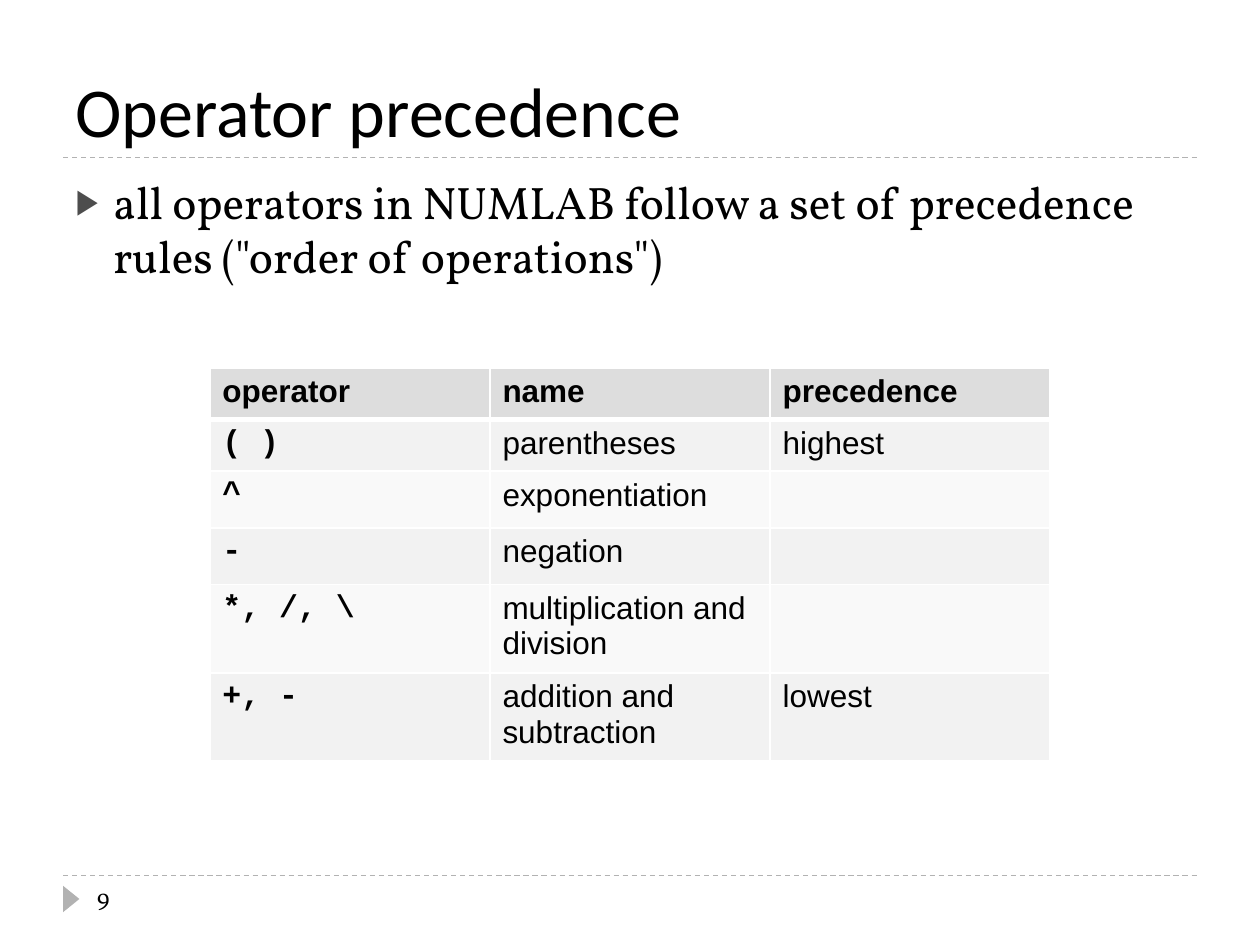
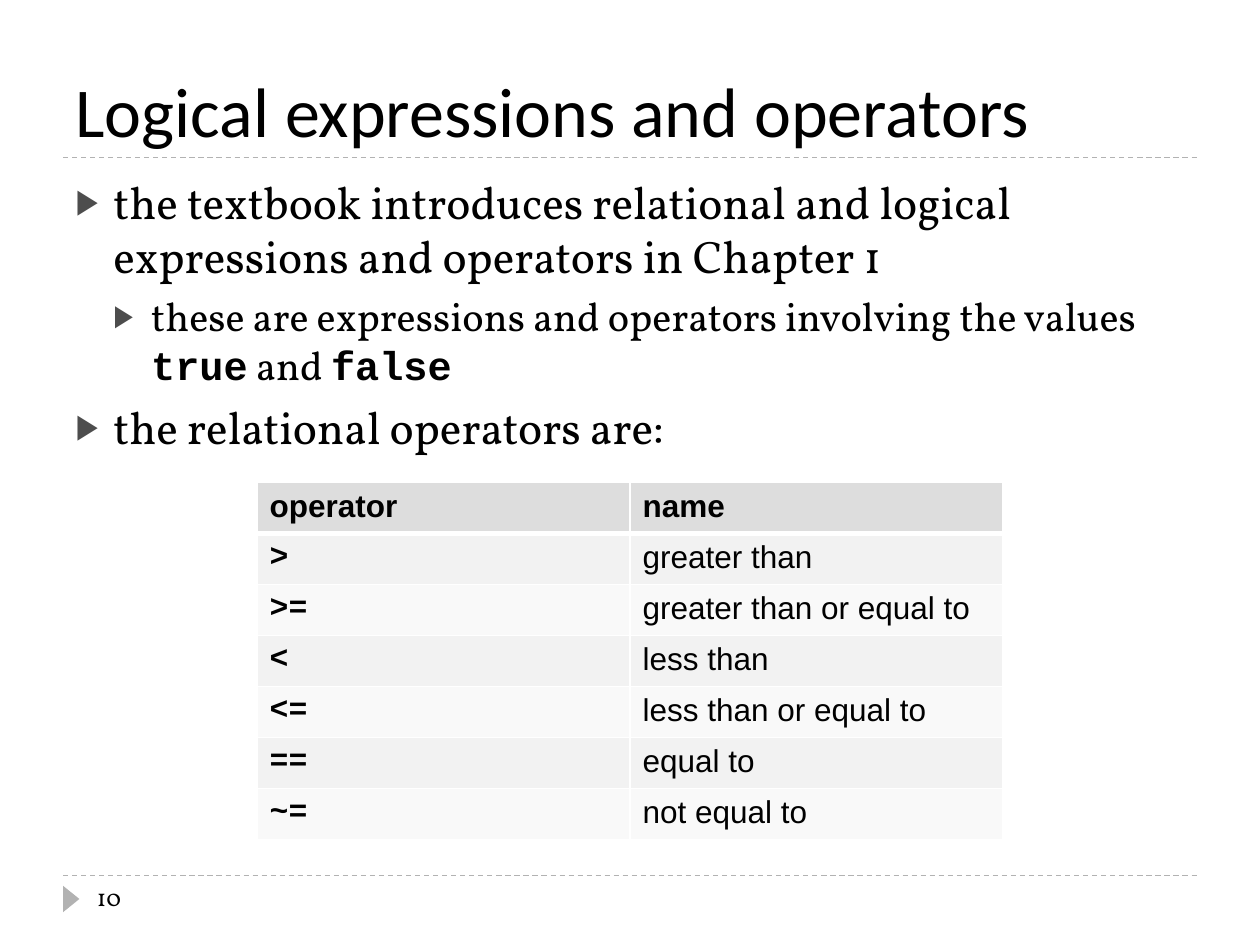
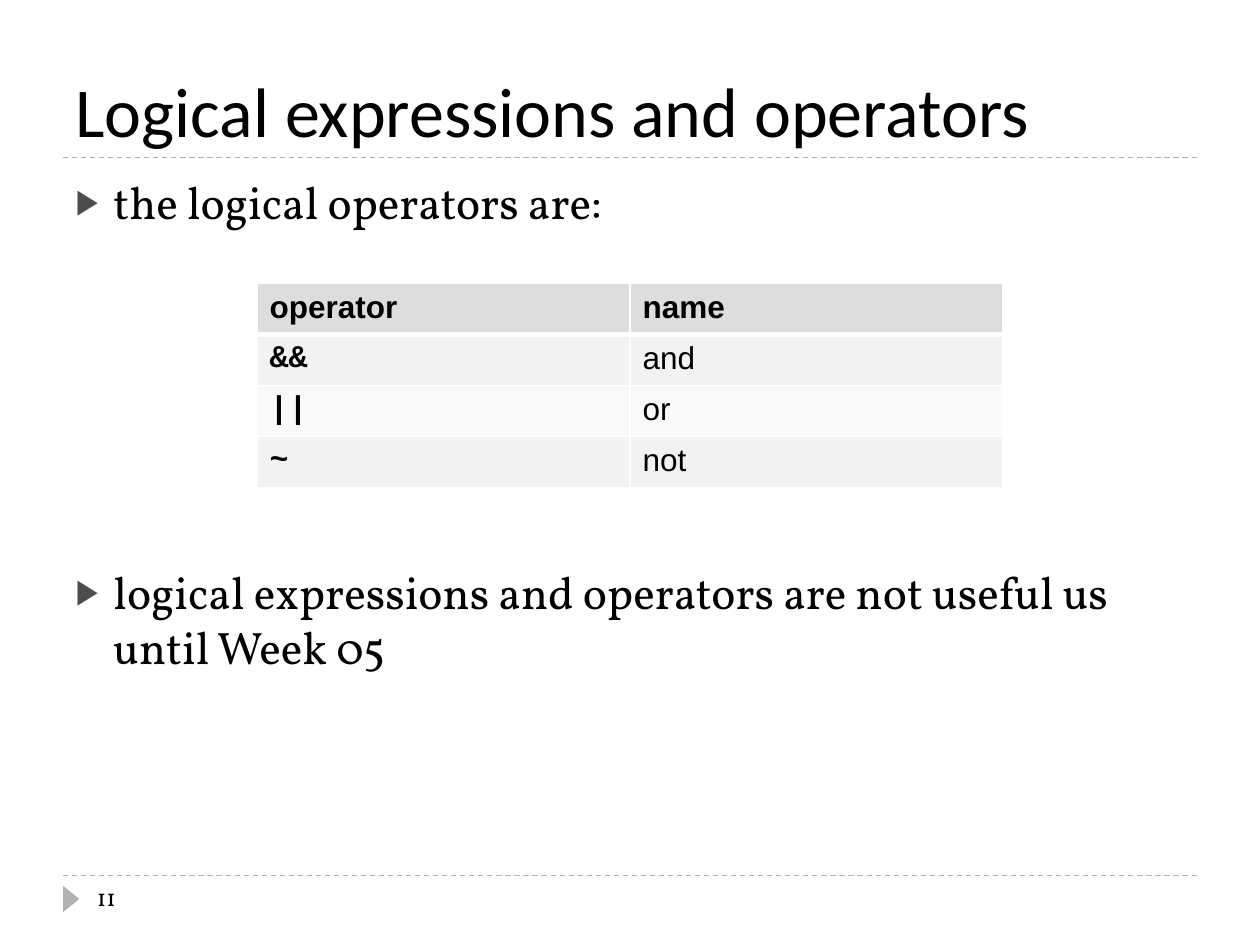
import pptx
import pptx.util
import pptx.dml.color
import pptx.enum.dml
import pptx.enum.shapes
import pptx.enum.text
import pptx.oxml
import pptx.oxml.ns

RGBColor = pptx.dml.color.RGBColor
Inches = pptx.util.Inches
Pt = pptx.util.Pt

BLACK = RGBColor(0, 0, 0)
WHITE = RGBColor(0xFF, 0xFF, 0xFF)
RULE_GREY = RGBColor(0xB2, 0xB2, 0xB2)
BULLET_GREY = RGBColor(0x4D, 0x4D, 0x4D)
HEADER_FILL = RGBColor(0xDD, 0xDD, 0xDD)
BAND_FILLS = [RGBColor(0xF2, 0xF2, 0xF2), RGBColor(0xF9, 0xF9, 0xF9)]

TITLE_FONT, BODY_FONT, CELL_FONT, CODE_FONT = "Calibri", "Vollkorn", "Arial", "Courier New"
WIDTH, HEIGHT, MARGIN = 10, 7.5, 0.5
CONTENT_WIDTH = WIDTH - 2 * MARGIN
TITLE_RULE, FOOTER_RULE = 1.25, 6.95
FIRST_PAGE = 9
ROW = 0.405
INDENT = 0.3
LEVELS = [{"size": 26, "before": 6}, {"size": 23, "before": 5}]

SLIDES = [
    {
        "title": "Operator precedence",
        "bullets": [
            {"runs": ['all operators in NUMLAB follow a set of precedence rules ("order of operations")']},
        ],
        "table": {
            "top": 2.92,
            "width": 6.67,
            "heights": [0.41, 0.41, 0.45, 0.45, 0.65, 0.65],
            "rows": [
                ("operator", "name", "precedence"),
                ("( )", "parentheses", "highest"),
                ("^", "exponentiation", ""),
                ("-", "negation", ""),
                ("*, /, \\", "multiplication and division", ""),
                ("+, -", "addition and subtraction", "lowest"),
            ],
        },
    },
    {
        "title": "Logical expressions and operators",
        "bullets": [
            {"runs": ["the textbook introduces relational and logical expressions and operators in Chapter 1"]},
            {
                "level": 1,
                "runs": [
                    "these are expressions and operators involving the values ",
                    ("true", CODE_FONT),
                    " and ",
                    ("false", CODE_FONT),
                ],
            },
            {"runs": ["the relational operators are:"]},
        ],
        "table": {
            "top": 3.83,
            "width": 5.92,
            "rows": [
                ("operator", "name"),
                (">", "greater than"),
                (">=", "greater than or equal to"),
                ("<", "less than"),
                ("<=", "less than or equal to"),
                ("==", "equal to"),
                ("~=", "not equal to"),
            ],
        },
    },
    {
        "title": "Logical expressions and operators",
        "bullets": [
            {"runs": ["the logical operators are:"]},
            {"runs": ["logical expressions and operators are not useful us until Week 05"], "before": 192},
        ],
        "table": {
            "top": 2.25,
            "width": 5.92,
            "rows": [
                ("operator", "name"),
                ("&&", "and"),
                ("||", "or"),
                ("~", "not"),
            ],
        },
    },
]


def xml(markup):
    tag = markup.split(" ", 1)
    return pptx.oxml.parse_xml(f"{tag[0]} {pptx.oxml.ns.nsdecls('a')} {tag[1]}")


def add_text(p, text, font=BODY_FONT, size=18, bold=False, color=BLACK):
    r = p.add_run()
    r.text = text
    r.font.name = font
    r.font.size = Pt(size)
    r.font.bold = bold
    r.font.color.rgb = color


def place(sp, left, top, width, height):
    sp.left, sp.top, sp.width, sp.height = map(Inches, (left, top, width, height))


def add_title(s, text):
    sp = s.shapes.title
    place(sp, MARGIN, 0.17, CONTENT_WIDTH, TITLE_RULE - 0.17)
    tf = sp.text_frame
    tf.auto_size = pptx.enum.text.MSO_AUTO_SIZE.NONE
    tf.vertical_anchor = pptx.enum.text.MSO_ANCHOR.BOTTOM
    p = tf.paragraphs[0]
    p.alignment = pptx.enum.text.PP_ALIGN.LEFT
    add_text(p, text, font=TITLE_FONT, size=40)


def add_bullets(s, bullets):
    sp = s.placeholders[1]
    place(sp, MARGIN, 1.33, CONTENT_WIDTH, 5.4)
    tf = sp.text_frame
    tf.auto_size = pptx.enum.text.MSO_AUTO_SIZE.NONE
    for i, bullet in enumerate(bullets):
        p = tf.add_paragraph() if i else tf.paragraphs[0]
        p.level = bullet.get("level", 0)
        style = LEVELS[p.level]
        p.space_before = Pt(bullet.get("before", style["before"]))
        pPr = p._p.get_or_add_pPr()
        pPr.set("marL", str(Inches(INDENT * (p.level + 1))))
        pPr.set("indent", str(Inches(-INDENT)))
        pPr.append(xml(f'<a:buClr ><a:srgbClr val="{BULLET_GREY}"/></a:buClr>'))
        pPr.append(xml('<a:buSzPct val="76000"/>'))
        pPr.append(xml('<a:buChar char="▶"/>'))
        for run in bullet["runs"]:
            text, font = (run, BODY_FONT) if isinstance(run, str) else run
            add_text(p, text, font=font, size=style["size"], bold=font == CODE_FONT)


def add_rule(s, y):
    line = s.shapes.add_connector(
        pptx.enum.shapes.MSO_CONNECTOR.STRAIGHT,
        Inches(MARGIN), Inches(y), Inches(WIDTH - MARGIN), Inches(y))
    line.line.color.rgb = RULE_GREY
    line.line.width = Pt(0.75)
    line.line.dash_style = pptx.enum.dml.MSO_LINE.DASH
    line._element.spPr.append(xml("<a:effectLst />"))


def add_frame(s, page):
    add_rule(s, FOOTER_RULE)
    add_rule(s, TITLE_RULE)
    sp = s.shapes.add_shape(
        pptx.enum.shapes.MSO_SHAPE.ISOSCELES_TRIANGLE,
        Inches(0.46), Inches(7.07), Inches(0.21), Inches(0.13))
    sp.rotation = 90
    sp.shadow.inherit = False
    sp.fill.solid()
    sp.fill.fore_color.rgb = RULE_GREY
    sp.line.fill.background()
    box = s.shapes.add_textbox(Inches(0.67), Inches(FOOTER_RULE), Inches(2.17), Inches(0.4))
    box.text_frame.word_wrap = True
    add_text(box.text_frame.paragraphs[0], str(page), size=14)


def set_borders(cell, top, bottom):
    tcPr = cell._tc.get_or_add_tcPr()
    for side, width in (("L", 1), ("R", 1), ("T", top), ("B", bottom)):
        tcPr.append(xml(
            f'<a:ln{side} w="{Pt(width)}"><a:solidFill><a:srgbClr val="{WHITE}"/>'
            f'</a:solidFill></a:ln{side}>'))


def add_operator_table(s, top, width, rows, heights=None):
    heights = heights or [ROW] * len(rows)
    columns = len(rows[0])
    table = s.shapes.add_table(
        len(rows), columns, Inches((WIDTH - width) / 2), Inches(top),
        Inches(width), Inches(sum(heights))).table
    for column in table.columns:
        column.width = Inches(width / columns)
    for i, row in enumerate(rows):
        table.rows[i].height = Inches(heights[i])
        for j, text in enumerate(row):
            cell = table.cell(i, j)
            set_borders(cell, top=3 if i == 1 else 1, bottom=3 if i == 0 else 1)
            cell.fill.solid()
            cell.fill.fore_color.rgb = BAND_FILLS[(i - 1) % 2] if i else HEADER_FILL
            if text:
                font = CODE_FONT if i and j == 0 else CELL_FONT
                add_text(cell.text_frame.paragraphs[0], text, font=font, bold=i == 0 or j == 0)


def main():
    prs = pptx.Presentation()
    prs.slide_width, prs.slide_height = Inches(WIDTH), Inches(HEIGHT)
    for page, content in enumerate(SLIDES, FIRST_PAGE):
        s = prs.slides.add_slide(prs.slide_layouts[1])
        add_frame(s, page)
        add_title(s, content["title"])
        add_bullets(s, content["bullets"])
        add_operator_table(s, **content["table"])
    prs.save("out.pptx")


if __name__ == "__main__":
    main()
